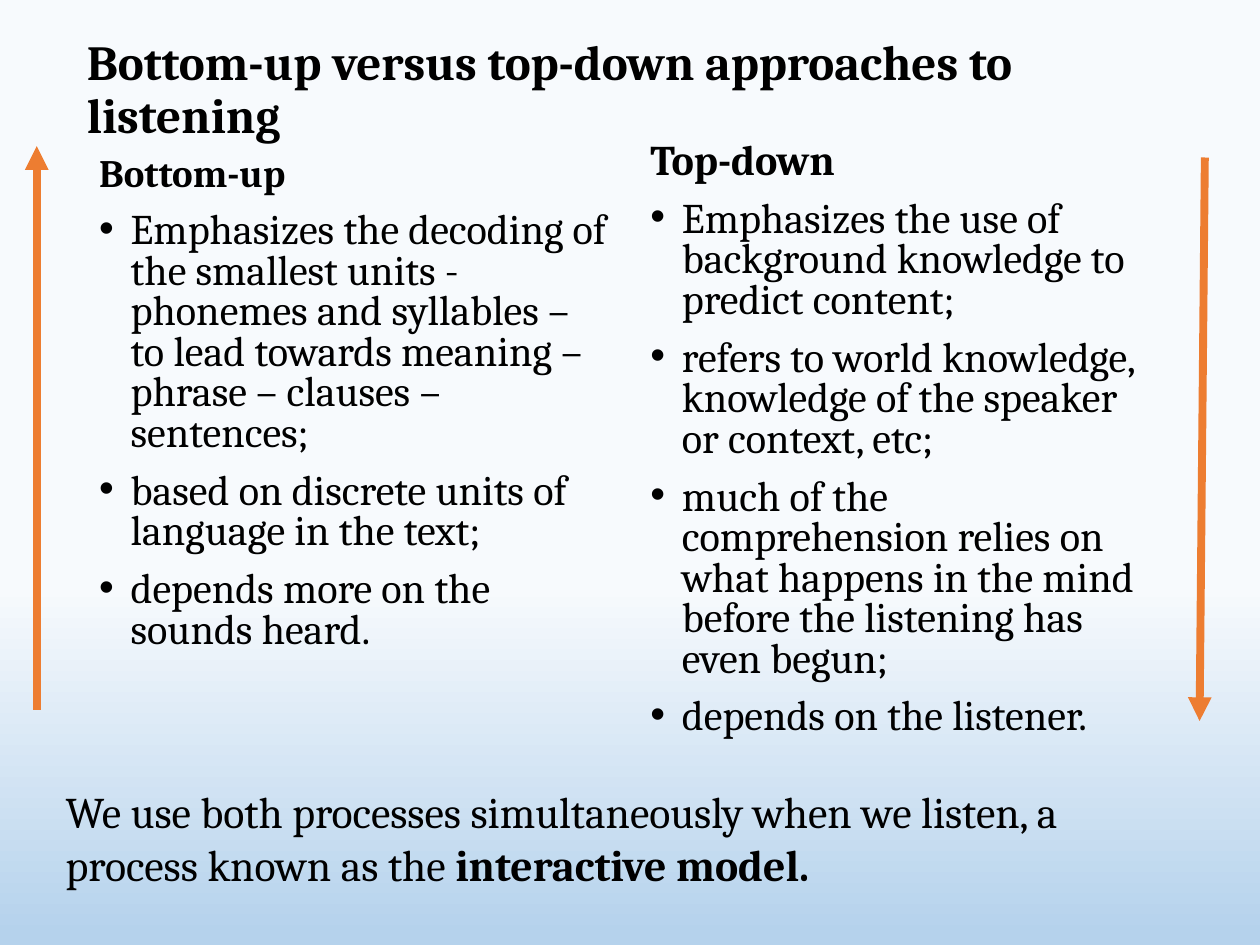
from lxml import etree
from pptx import Presentation
from pptx.dml.color import RGBColor
from pptx.enum import shapes, text
from pptx.oxml import ns
from pptx.util import Pt

FONT = "Cambria"
BLACK = RGBColor(0x00, 0x00, 0x00)
ORANGE = RGBColor(0xED, 0x7D, 0x31)
PALE = RGBColor(0xF7, 0xFA, 0xFD)
BLUE = RGBColor(0xB5, 0xD2, 0xEC)

BOTTOM_UP = [
    "Emphasizes the decoding of the smallest units - phonemes and syllables – "
    "to lead towards meaning – phrase – clauses – sentences;",
    "based on discrete units of language in the text;",
    "depends more on the sounds heard.",
]
TOP_DOWN = [
    "Emphasizes the use of background knowledge to predict content;",
    "refers to world knowledge, knowledge of the speaker or context, etc;",
    "much of the comprehension relies on what happens in the mind before "
    "the listening has even begun;",
    "depends on the listener.",
]


def place(sp, box):
    """Move a shape to a box of left, top, width and height in points."""
    sp.left, sp.top, sp.width, sp.height = map(Pt, box)


def style(r, size, bold=False):
    """Format one run."""
    r.font.name, r.font.size, r.font.bold = FONT, Pt(size), bold
    r.font.color.rgb = BLACK


def set_bullet(p, char=None, indent=0):
    """Give a paragraph a hanging bullet, or none."""
    pPr = p._p.get_or_add_pPr()
    pPr.set("marL", str(Pt(indent)))
    pPr.set("indent", str(-Pt(indent)))
    if char:
        font = etree.SubElement(pPr, ns.qn("a:buFont"))
        font.set("typeface", "Arial")
        etree.SubElement(pPr, ns.qn("a:buChar")).set("char", char)
    else:
        etree.SubElement(pPr, ns.qn("a:buNone"))


def add_background(s):
    """Fill the slide with a vertical gradient."""
    fill = s.background.fill
    fill.gradient()
    fill.gradient_angle = 270
    for stop, position, color in zip(fill.gradient_stops, (0.62, 0.99), (PALE, BLUE)):
        stop.position = position
        stop.color.rgb = color


def add_title(sp, box, title):
    """Fill the title placeholder."""
    place(sp, box)
    tf = sp.text_frame
    tf.text = title
    tf.auto_size = text.MSO_AUTO_SIZE.NONE
    tf.vertical_anchor = text.MSO_ANCHOR.MIDDLE
    p = tf.paragraphs[0]
    p.alignment = text.PP_ALIGN.LEFT
    p.line_spacing = 0.9
    style(p.runs[0], 28, True)


def add_column(sp, box, heading, heading_size, items):
    """Fill a body placeholder with a heading and its bulleted points."""
    place(sp, box)
    tf = sp.text_frame
    tf.text = "\n".join([heading] + items)
    tf.auto_size = text.MSO_AUTO_SIZE.NONE
    for i, p in enumerate(tf.paragraphs):
        p.line_spacing = 0.8
        p.space_before = Pt(10)
        set_bullet(p, "•" if i else None, 18 if i else 0)
        style(p.runs[0], 24.1 if i else heading_size, i == 0)


def add_arrow(s, x1, y1, x2, y2):
    """Draw a thick arrow pointing at its second end."""
    c = s.shapes.add_connector(
        shapes.MSO_CONNECTOR.STRAIGHT, Pt(x1), Pt(y1), Pt(x2), Pt(y2))
    c.line.color.rgb = ORANGE
    c.line.width = Pt(4.5)
    etree.SubElement(c.line._get_or_add_ln(), ns.qn("a:tailEnd")).set("type", "triangle")
    etree.SubElement(c._element.spPr, ns.qn("a:effectLst"))


def add_conclusion(s, box, lead, term):
    """Write the closing sentence with its key term in bold."""
    tf = s.shapes.add_textbox(*map(Pt, box)).text_frame
    tf.word_wrap = True
    p = tf.paragraphs[0]
    for words, bold in ((lead, False), (term, True)):
        r = p.add_run()
        r.text = words
        style(r, 25, bold)


def main():
    """Build the slide and save it."""
    prs = Presentation()
    prs.slide_width, prs.slide_height = Pt(720), Pt(540)
    s = prs.slides.add_slide(prs.slide_layouts[3])
    title, left, right = s.placeholders
    add_background(s)
    add_title(title, (42.5, 20, 628, 64),
              "Bottom-up versus top-down approaches to listening")
    add_column(left, (49.5, 86.5, 306, 342), "Bottom-up", 22.2, BOTTOM_UP)
    add_column(right, (364.5, 78, 306, 381.5), "Top-down", 24.1, TOP_DOWN)
    add_arrow(s, 21, 405.5, 21, 83.5)
    add_arrow(s, 688.5, 90, 685.5, 412)
    add_conclusion(s, (30.5, 445, 633.5, 67.5),
                   "We use both processes simultaneously when we listen, "
                   "a process known as the ", "interactive model.")
    prs.save("out.pptx")


if __name__ == "__main__":
    main()
